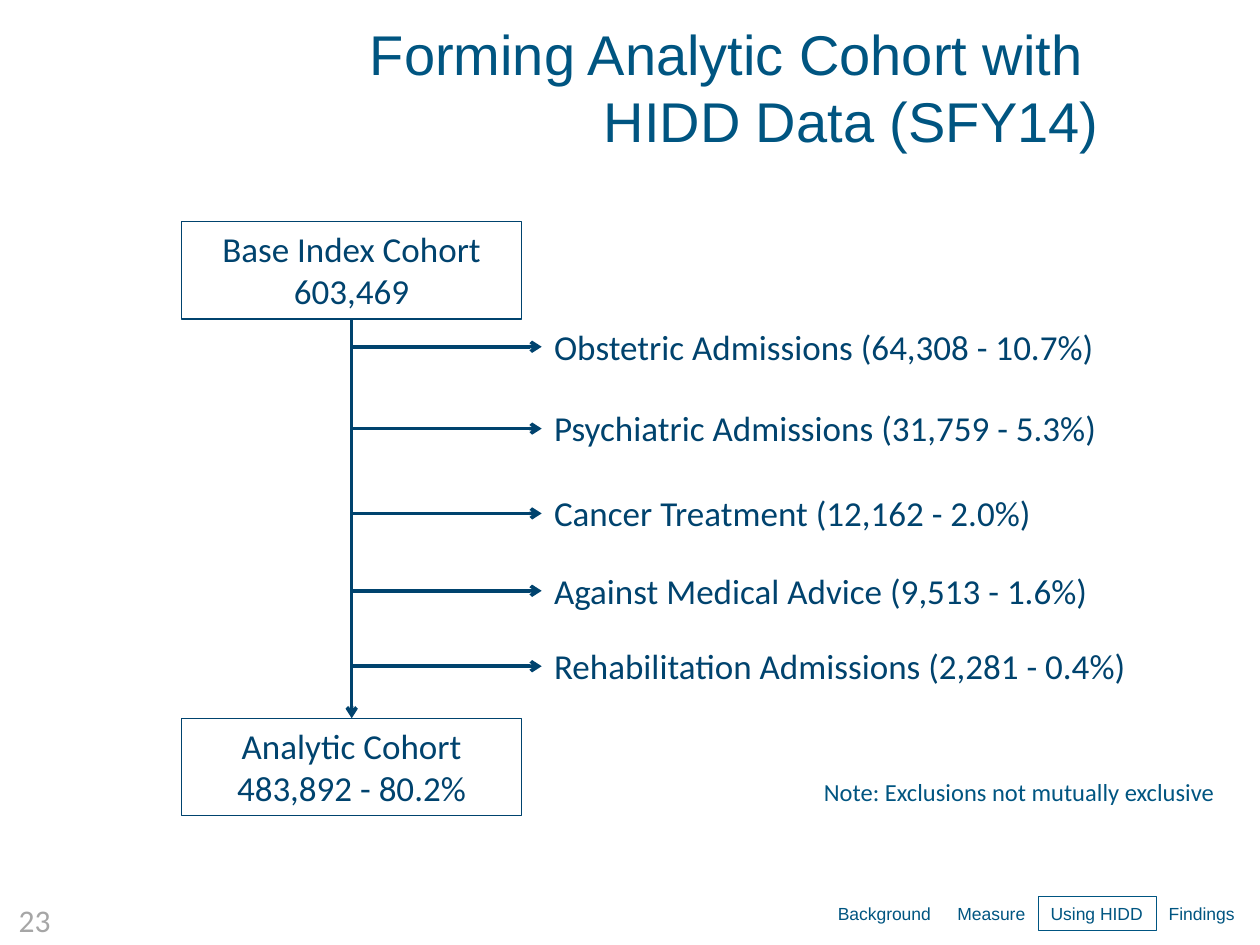
from lxml.etree import SubElement
from pptx import Presentation
from pptx.dml.color import RGBColor
from pptx.enum.shapes import MSO_CONNECTOR, MSO_SHAPE
from pptx.enum.text import MSO_ANCHOR, PP_ALIGN
from pptx.oxml.ns import qn
from pptx.util import Cm, Pt

NAVY, BLUE, GREY = "00436E", "005581", "A6A6A6"
BODY = {"name": "Calibri", "size": Pt(20), "color": NAVY}
NOTE = {"name": "Calibri", "size": Pt(14), "color": BLUE}
NUMBER = {"name": "Calibri", "size": Pt(18), "color": GREY}
NAV = {"name": "Arial", "size": Pt(10), "color": BLUE}
TITLE = {"name": "Arial", "size": Pt(32), "color": BLUE}

TITLE_LINES = ["Forming Analytic Cohort with ", "HIDD Data (SFY14)"]
BASE = ["Base Index Cohort", "603,469"]
ANALYTIC = ["Analytic Cohort", "483,892 - 80.2%"]
EXCLUSIONS = [  # label, centre height in cm, text width in cm
    ("Obstetric Admissions (64,308 - 10.7%)", 6.99, 12.5),
    ("Psychiatric Admissions (31,759 - 5.3%)", 8.64, 12.22),
    ("Cancer Treatment (12,162 - 2.0%)", 10.35, 11.89),
    ("Against Medical Advice (9,513 - 1.6%)", 11.91, 12.22),
    ("Rehabilitation Admissions (2,281 - 0.4%)", 13.43, 13.34),
]
SECTIONS = [("Background", 2.41), ("Measure", 1.88), ("Using HIDD", 2.38), ("Findings", 1.85)]
CURRENT = "Using HIDD"

BOX_LEFT, BOX_W, BOX_H = 3.66, 6.86, 1.96
BASE_TOP, ANALYTIC_TOP = 4.47, 14.48
LABEL_LEFT, LABEL_H = 10.92, 1.12
NAV_LEFT, NAV_TOP, NAV_H = 16.64, 18.08, 0.68


def rgb(value):
    return RGBColor.from_string(value)


def set_font(font, style):
    for key, value in style.items():
        if key == "color":
            font.color.rgb = rgb(value)
        else:
            setattr(font, key, value)


def write(sp, lines, style, align=PP_ALIGN.LEFT, wrap=True):
    tf = sp.text_frame
    tf.word_wrap = wrap
    for i, line in enumerate(lines):
        p = tf.paragraphs[0] if i == 0 else tf.add_paragraph()
        p.alignment = align
        r = p.add_run()
        r.text = line
        set_font(r.font, style)


def add_text(s, box, lines, style, **options):
    sp = s.shapes.add_textbox(*map(Cm, box))
    write(sp, lines, style, **options)


def add_box(s, box, lines, style, **options):
    sp = s.shapes.add_shape(MSO_SHAPE.RECTANGLE, *map(Cm, box))
    sp.shadow.inherit = False
    sp.fill.background()
    sp.line.color.rgb = rgb(style["color"])
    sp.line.width = Pt(0.75)
    sp.text_frame.vertical_anchor = MSO_ANCHOR.TOP
    write(sp, lines, style, **options)
    return sp


def add_arrow(s, x1, y1, x2, y2):
    line = s.shapes.add_connector(MSO_CONNECTOR.STRAIGHT, *map(Cm, (x1, y1, x2, y2)))
    line.line.color.rgb = rgb(NAVY)
    line.line.width = Pt(2)
    SubElement(line.line._get_or_add_ln(), qn("a:tailEnd"), type="arrow")
    SubElement(line._element.spPr, qn("a:effectLst"))
    return line


def add_title(s):
    sp = s.shapes.title
    sp.left, sp.top, sp.width, sp.height = map(Cm, (0.46, 0.33, 21.95, 2.82))
    tf = sp.text_frame
    tf.word_wrap = True
    tf.vertical_anchor = MSO_ANCHOR.MIDDLE
    p = tf.paragraphs[0]
    p.alignment = PP_ALIGN.RIGHT
    for i, line in enumerate(TITLE_LINES):
        if i:
            p.add_line_break()
        r = p.add_run()
        r.text = line
        set_font(r.font, TITLE)


def add_flow(s):
    base, analytic = [
        add_box(s, (BOX_LEFT, top, BOX_W, BOX_H), lines, BODY, align=PP_ALIGN.CENTER)
        for top, lines in ((BASE_TOP, BASE), (ANALYTIC_TOP, ANALYTIC))
    ]
    stem = BOX_LEFT + BOX_W / 2
    trunk = add_arrow(s, stem, BASE_TOP + BOX_H, stem, ANALYTIC_TOP)
    trunk.begin_connect(base, 2)
    trunk.end_connect(analytic, 0)
    for label, y, width in EXCLUSIONS:
        add_arrow(s, stem, y, LABEL_LEFT, y)
        add_text(s, (LABEL_LEFT, y - LABEL_H / 2, width, LABEL_H), [label], BODY)


def add_navigation(s):
    left = NAV_LEFT
    for name, width in SECTIONS:
        add = add_box if name == CURRENT else add_text
        add(s, (left, NAV_TOP, width, NAV_H), [name], NAV, wrap=False)
        left += width


def main():
    prs = Presentation()
    prs.slide_width, prs.slide_height = Cm(25.4), Cm(19.05)
    s = prs.slides.add_slide(prs.slide_layouts[5])
    add_title(s)
    add_flow(s)
    add_text(s, (16.36, 15.54, 8.74, 0.86), ["Note: Exclusions not mutually exclusive"], NOTE)
    add_navigation(s)
    add_text(s, (0, 18.03, 1.27, 1.02), ["23"], NUMBER, align=PP_ALIGN.RIGHT, wrap=False)
    prs.save("out.pptx")


if __name__ == "__main__":
    main()
